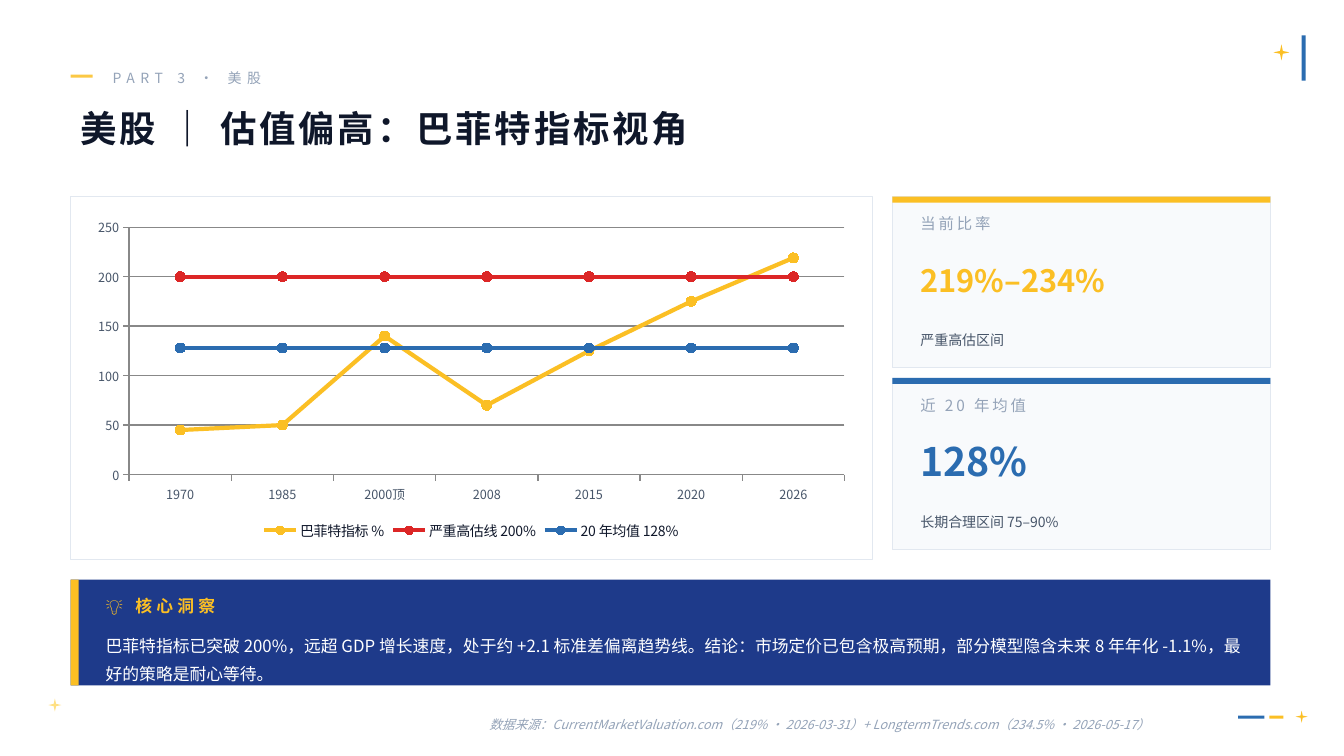
from lxml import etree
from pptx import Presentation, util as u
from pptx.chart.data import CategoryChartData
from pptx.dml.color import RGBColor
from pptx.enum import chart as ch, shapes, text
from pptx.oxml import ns

FACE = "Noto Sans CJK SC"
HUE = {
    "white": "FFFFFF", "gold": "FBBF24", "pale": "FFE082", "blue": "2B6CB0",
    "navy": "1E3A8A", "red": "DC2626", "ink": "0F172A", "slate": "475569",
    "mute": "94A3B8", "edge": "E2E8F0", "card": "F8FAFC", "grid": "888888",
}
RECT = shapes.MSO_SHAPE.RECTANGLE
STAR = shapes.MSO_SHAPE.STAR_4_POINT
MID = text.MSO_ANCHOR.MIDDLE
TOP = text.MSO_ANCHOR.TOP


def rgb(name):
    return RGBColor.from_string(HUE[name])


def inch(*box):
    return [u.Inches(v) for v in box]


def style(font, size, hue, **fmt):
    """Set size, colour, face and any further font values."""
    font.color.rgb = rgb(hue)
    for key, val in {"size": u.Pt(size), "name": FACE, **fmt}.items():
        setattr(font, key, val)


def stroke(line, hue, width):
    line.color.rgb = rgb(hue)
    line.width = u.Pt(width)


def block(slide, box, hue, kind=RECT, edge=None, alpha=None):
    """Flat filled shape, with a thin edge if one is named."""
    shape = slide.shapes.add_shape(kind, *inch(*box))
    shape.shadow.inherit = False
    shape.fill.solid()
    shape.fill.fore_color.rgb = rgb(hue)
    if edge:
        stroke(shape.line, edge, 0.5)
    else:
        shape.line.fill.background()
    if alpha:
        color = shape.fill._xPr.find(".//" + ns.qn("a:srgbClr"))
        etree.SubElement(color, ns.qn("a:alpha")).set("val", str(alpha * 1000))


def label(slide, box, words, size, hue, gap=0, anchor=MID, para=None, **fmt):
    """One-paragraph text box; gap is letter spacing in points."""
    frame = slide.shapes.add_textbox(*inch(*box)).text_frame
    frame.word_wrap = True
    frame.vertical_anchor = anchor
    line = frame.paragraphs[0]
    for key, val in (para or {}).items():
        setattr(line, key, val)
    run = line.add_run()
    run.text = words
    style(run.font, size, hue, **fmt)
    props = run._r.get_or_add_rPr()
    if gap:
        props.set("spc", str(gap * 100))
    east = etree.Element(ns.qn("a:ea"), typeface=FACE)
    props.find(ns.qn("a:latin")).addnext(east)


def decor(slide):
    # Top right
    block(slide, (12.91, 0.35, 0.04, 0.45), "blue")
    block(slide, (12.63, 0.44, 0.16, 0.16), "gold", STAR)
    # Bottom right
    block(slide, (12.28, 7.1, 0.26, 0.03), "blue")
    block(slide, (12.59, 7.1, 0.14, 0.03), "gold")
    block(slide, (12.85, 7.05, 0.12, 0.12), "gold", STAR)
    # Bottom left
    block(slide, (0.48, 6.93, 0.13, 0.13), "pale", STAR)


def header(slide, x, y, part, title):
    block(slide, (x, y + 0.12, 0.22, 0.03), "gold", alpha=85)
    label(slide, (x + 0.32, y, 8, 0.3), part, 10, "mute", gap=4)
    label(slide, (x, y + 0.38, 12, 1), title, 26, "ink", gap=2,
          anchor=TOP, bold=True)


def trend(slide, x, y, w, h, cats, rows):
    """Framed line chart; rows hold name, hue and values."""
    block(slide, (x, y, w, h), "white", edge="edge")
    data = CategoryChartData()
    data.categories = cats
    for name, _, vals in rows:
        data.add_series(name, vals)
    box = inch(x + 0.12, y + 0.15, w - 0.24, h - 0.3)
    chart = slide.shapes.add_chart(
        ch.XL_CHART_TYPE.LINE_MARKERS, *box, data).chart
    chart.has_title = False
    chart.font.size = u.Pt(10)
    chart.font.name = "Calibri"

    # Legend
    chart.has_legend = True
    chart.legend.position = ch.XL_LEGEND_POSITION.BOTTOM
    chart.legend.include_in_layout = False
    style(chart.legend.font, 10, "ink")

    # Axes
    down, up = chart.category_axis, chart.value_axis
    for axis in (down, up):
        style(axis.tick_labels.font, 9, "slate")
        stroke(axis.format.line, "grid", 1)
        axis.major_tick_mark = ch.XL_TICK_MARK.OUTSIDE
    down.tick_label_position = ch.XL_TICK_LABEL_POSITION.LOW
    scale = {"minimum_scale": 0, "maximum_scale": 250, "major_unit": 50,
             "has_major_gridlines": True}
    for key, val in scale.items():
        setattr(up, key, val)
    stroke(up.major_gridlines.format.line, "grid", 1)

    # Series
    plot = chart.plots[0]
    plot.vary_by_categories = False
    for series, (_, hue, _) in zip(plot.series, rows):
        series.smooth = False
        stroke(series.format.line, hue, 3)
        mark = series.marker
        mark.style = ch.XL_MARKER_STYLE.CIRCLE
        mark.size = 7
        mark.format.fill.solid()
        mark.format.fill.fore_color.rgb = rgb(hue)
        mark.format.line.color.rgb = rgb(hue)


def card(slide, x, y, w, h, hue, head, value, size, note):
    block(slide, (x, y, w, h), "card", edge="edge")
    block(slide, (x, y, w, 0.06), hue)
    left, wide = x + 0.18, w - 0.36
    label(slide, (left, y + 0.12, wide, 0.3), head, 11, "mute", gap=2)
    label(slide, (left, y + 0.45, wide, 0.75), value, size, hue, bold=True)
    label(slide, (left, y + 1.2, wide, 0.4), note, 10, "slate",
          para={"line_spacing": 1.3})


def insight(slide, x, y, w, h, head, body):
    block(slide, (x, y, w, h), "navy")
    block(slide, (x, y, 0.08, h), "gold")
    label(slide, (x + 0.25, y + 0.08, 3, 0.35), head, 12, "gold", gap=3,
          bold=True)
    label(slide, (x + 0.25, y + 0.43, w - 0.4, 0.6), body, 12, "white",
          anchor=TOP, para={"line_spacing": 1.4})


def main():
    deck = Presentation()
    deck.slide_width, deck.slide_height = inch(13.33, 7.5)
    slide = deck.slides.add_slide(deck.slide_layouts[6])
    slide.background.fill.solid()
    slide.background.fill.fore_color.rgb = rgb("white")

    decor(slide)
    header(slide, 0.7, 0.62, "PART 3 · 美股", "美股 ｜ 估值偏高：巴菲特指标视角")

    cats = ["1970", "1985", "2000顶", "2008", "2015", "2020", "2026"]
    rows = [
        ("巴菲特指标 %", "gold", [45, 50, 140, 70, 125, 175, 219]),
        ("严重高估线 200%", "red", [200] * len(cats)),
        ("20 年均值 128%", "blue", [128] * len(cats)),
    ]
    trend(slide, 0.7, 1.95, 7.95, 3.6, cats, rows)

    cards = [
        ("gold", "当前比率", "219%–234%", 22, "严重高估区间"),
        ("blue", "近 20 年均值", "128%", 28, "长期合理区间 75–90%"),
    ]
    for i, item in enumerate(cards):
        card(slide, 8.85, 1.95 + 1.8 * i, 3.75, 1.7, *item)

    insight(slide, 0.7, 5.75, 11.9, 1.05, "💡 核心洞察",
            "巴菲特指标已突破 200%，远超 GDP 增长速度，处于约 +2.1 标准差偏离趋势线。"
            "结论：市场定价已包含极高预期，部分模型隐含未来 8 年年化 -1.1%，"
            "最好的策略是耐心等待。")

    # Source line
    label(slide, (0.7, 7.05, 10.8, 0.28),
          "数据来源：CurrentMarketValuation.com（219% · 2026-03-31）"
          "+ LongtermTrends.com（234.5% · 2026-05-17）", 9, "mute",
          para={"alignment": text.PP_ALIGN.RIGHT}, italic=True)
    deck.save("out.pptx")


if __name__ == "__main__":
    main()
